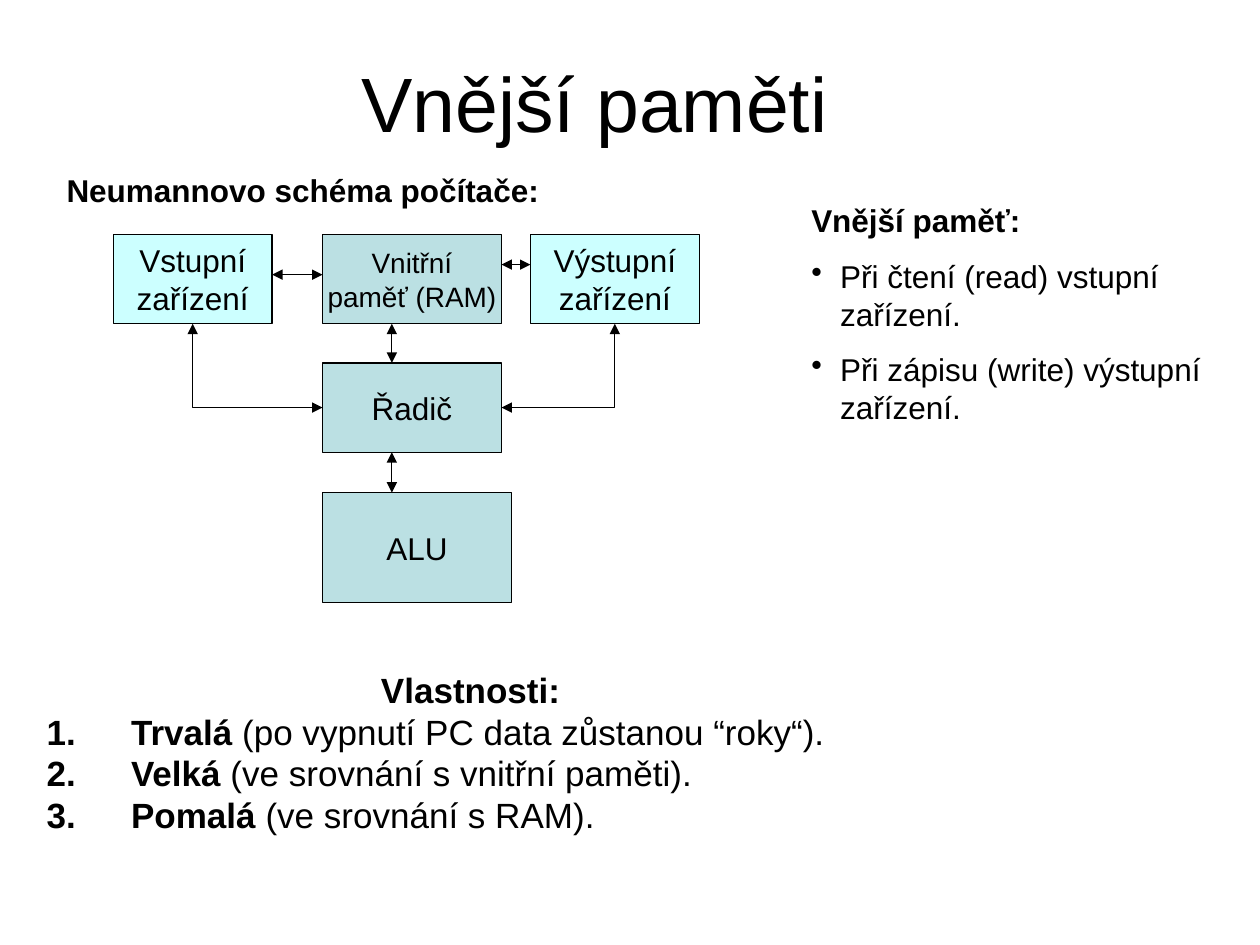
from lxml import etree
from pptx import Presentation
from pptx.dml.color import RGBColor
from pptx.enum.shapes import MSO_CONNECTOR, MSO_SHAPE
from pptx.enum.text import MSO_ANCHOR, MSO_AUTO_SIZE, PP_ALIGN
from pptx.oxml.ns import qn
from pptx.util import Inches, Pt

STRAIGHT, ELBOW = MSO_CONNECTOR.STRAIGHT, MSO_CONNECTOR.ELBOW
RECTANGLE = MSO_SHAPE.RECTANGLE
LEFT, CENTER = PP_ALIGN.LEFT, PP_ALIGN.CENTER
TOP, MIDDLE = MSO_ANCHOR.TOP, MSO_ANCHOR.MIDDLE
NO_FIT = MSO_AUTO_SIZE.NONE

BLACK = RGBColor(0x00, 0x00, 0x00)
TEAL = RGBColor(0xBB, 0xE0, 0xE3)
CYAN = RGBColor(0xCC, 0xFF, 0xFF)
NUMBERED = ("a:buAutoNum", {"type": "arabicPeriod"})
DOTTED = ("a:buChar", {"char": "•"})
SIDE_LEFT, SIDE_BOTTOM, SIDE_RIGHT = 1, 2, 3


def write_para(para, spans, size, align=LEFT, before=0, spacing=1.0, indent=0, bullet=None):
    para.alignment = align
    para.space_before = Pt(before)
    para.line_spacing = spacing
    props = para._p.get_or_add_pPr()
    props.set("marL", str(Inches(indent)))
    props.set("indent", str(Inches(-indent)))
    if bullet:
        tag, attributes = bullet
        etree.SubElement(props, qn(tag), attributes)
    for text, bold in spans:
        span = para.add_run()
        span.text = text
        span.font.name = "Arial"
        span.font.size = Pt(size)
        span.font.bold = bold
        span.font.color.rgb = BLACK


def write_text(shape, paras, anchor=TOP, wrap=True, **shared):
    frame = shape.text_frame
    frame.word_wrap = wrap
    frame.auto_size = NO_FIT
    frame.vertical_anchor = anchor
    for number, (spans, own) in enumerate(paras):
        para = frame.add_paragraph() if number else frame.paragraphs[0]
        write_para(para, spans, **{**shared, **own})


def place(shape, box):
    shape.left, shape.top, shape.width, shape.height = map(Inches, box)


def add_title(page, box):
    title = page.shapes.title
    place(title, box)
    write_text(title, [([("Vnější paměti", False)], {})], MIDDLE, size=44, align=CENTER)


def add_properties(page, box):
    body = page.placeholders[1]
    place(body, box)
    items = [
        ("Trvalá", " (po vypnutí PC data zůstanou “roky“)."),
        ("Velká", " (ve srovnání s vnitřní paměti)."),
        ("Pomalá", " (ve srovnání s RAM)."),
    ]
    paras = [([("Vlastnosti:", True)], {"align": CENTER})]
    paras += [([(name, True), (note, False)], {"bullet": NUMBERED}) for name, note in items]
    write_text(body, paras, size=20, before=4.6, spacing=0.8, indent=0.67)


def add_note(page, box, heading, items=()):
    note = page.shapes.add_textbox(*map(Inches, box))
    paras = [([(heading, True)], {})]
    paras += [([(item, False)], {"indent": 0.23, "bullet": DOTTED}) for item in items]
    write_text(note, paras, size=18, before=10)


def add_unit(page, box, lines, fill, size=18):
    unit = page.shapes.add_shape(RECTANGLE, *map(Inches, box))
    unit.shadow.inherit = False
    unit.fill.solid()
    unit.fill.fore_color.rgb = fill
    unit.line.color.rgb = BLACK
    unit.line.width = Pt(0.75)
    paras = [([(line, False)], {}) for line in lines]
    write_text(unit, paras, MIDDLE, wrap=False, size=size, align=CENTER)
    return unit


def add_arrow(page, kind, start=(0, 0), end=(0, 0)):
    arrow = page.shapes.add_connector(kind, *map(Inches, (*start, *end)))
    arrow.line.color.rgb = BLACK
    arrow.line.width = Pt(0.75)
    line = arrow.line._get_or_add_ln()
    for tag in ("a:headEnd", "a:tailEnd"):
        etree.SubElement(line, qn(tag), type="triangle")
    etree.SubElement(arrow._element.spPr, qn("a:effectLst"))
    return arrow


def add_corner_arrow(page, source, source_side, target):
    arrow = add_arrow(page, ELBOW)
    arrow.begin_connect(source, source_side)
    arrow.end_connect(target, SIDE_BOTTOM)
    arrow._element.spPr.find(qn("a:prstGeom")).set("prst", "bentConnector2")


def add_scheme(page, box):
    left, top, width, height = box
    middle, right = left + 1.66, left + 3.08
    output_left = left + 3.31
    row = 0.71
    controller_top, alu_top = top + 1.02, top + 2.05

    add_unit(page, (middle, top, right - middle, row), ["Vnitřní", "paměť (RAM)"], TEAL, 16)
    controller = add_unit(page, (middle, controller_top, right - middle, row), ["Řadič"], TEAL)
    add_unit(page, (middle, alu_top, 1.5, top + height - alu_top), ["ALU"], TEAL)
    source = add_unit(page, (left, top, 1.26, row), ["Vstupní", "zařízení"], CYAN)
    output_box = (output_left, top, left + width - output_left, row)
    target = add_unit(page, output_box, ["Výstupní", "zařízení"], CYAN)

    axis = middle + 0.55
    for upper, lower in ((top, controller_top), (controller_top, alu_top)):
        add_arrow(page, STRAIGHT, (axis, upper + row), (axis, lower))
    add_arrow(page, STRAIGHT, (left + 1.26, top + 0.32), (middle, top + 0.32))
    add_arrow(page, STRAIGHT, (right, top + 0.24), (output_left, top + 0.24))
    add_corner_arrow(page, controller, SIDE_LEFT, source)
    add_corner_arrow(page, controller, SIDE_RIGHT, target)


def main():
    deck = Presentation()
    deck.slide_width, deck.slide_height = Inches(10), Inches(7.5)
    page = deck.slides.add_slide(deck.slide_layouts[0])
    add_title(page, (1.69, 0, 6.06, 1.61))
    add_properties(page, (0.27, 5.32, 6.93, 1.92))
    add_scheme(page, (0.9, 1.86, 4.65, 2.92))
    add_note(page, (0.43, 1.31, 4.8, 0.4), "Neumannovo schéma počítače:")
    add_note(
        page,
        (6.34, 1.55, 3.39, 1.9),
        "Vnější paměť:",
        ["Při čtení (read) vstupní zařízení.", "Při zápisu (write) výstupní zařízení."],
    )
    deck.save("out.pptx")


if __name__ == "__main__":
    main()
